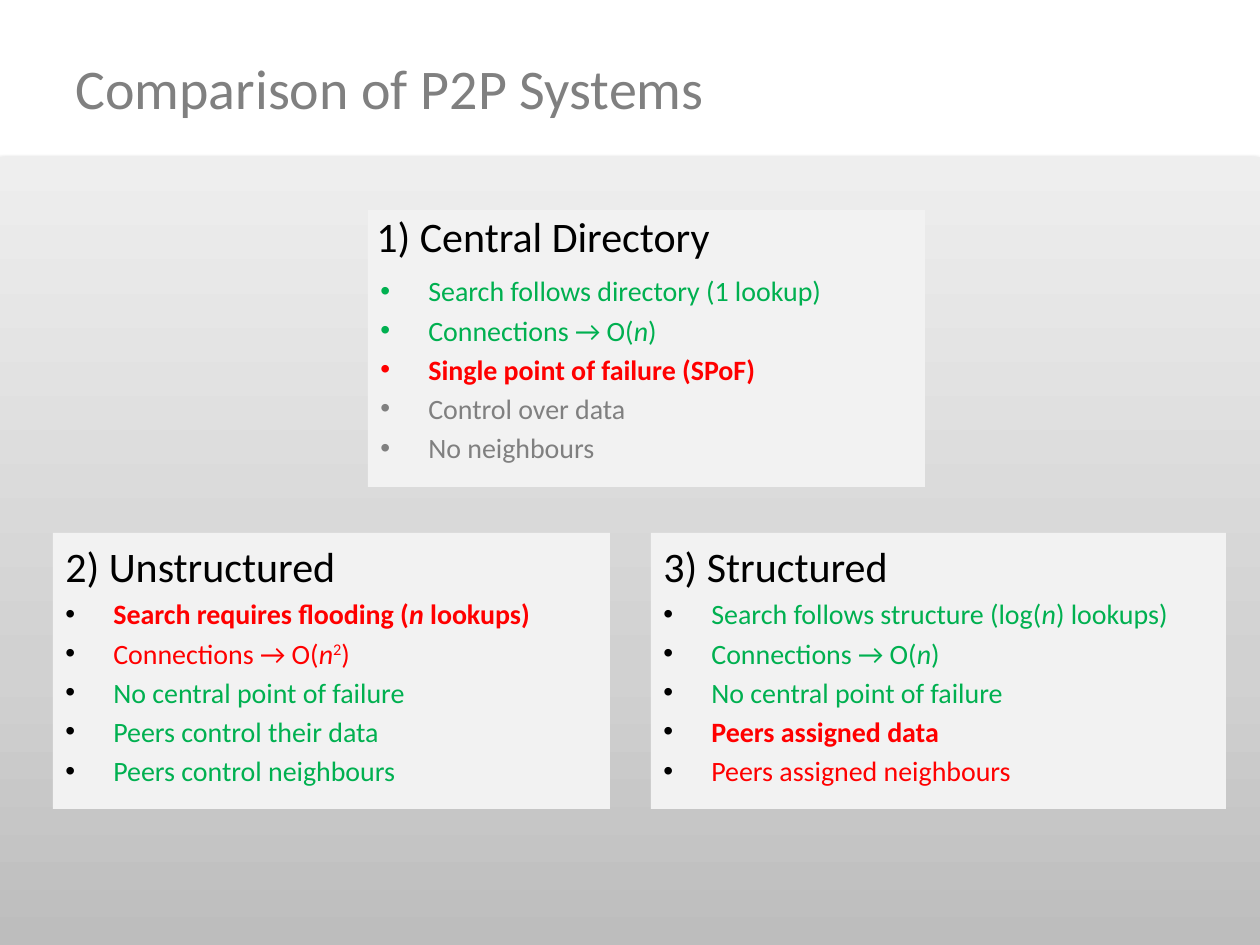
from lxml import etree
from pptx import Presentation, util as u
from pptx.dml.color import RGBColor
from pptx.enum import shapes, text
from pptx.oxml import parse_xml
from pptx.oxml.ns import nsdecls, qn

PX = u.Inches(1) / 126
THEME = {
    "font": "Calibri",
    "title_size": 32,
    "heading_size": 24,
    "bullet_size": 16,
    "black": "000000",
    "grey": "808080",
    "good": "00B050",
    "bad": "FF0000",
    "card": "F2F2F2",
    "gradient": [(0, "BDBDBD"), (35, "D1D1D1"), (100, "EEEEEE")],
}


def px(*lengths):
    return [u.Emu(round(length * PX)) for length in lengths]


def write(paragraph, words, size, color, bold=False, italic=False, raised=False):
    run = paragraph.add_run()
    run.text = words
    run.font.name = THEME["font"]
    run.font.size = u.Pt(size)
    run.font.color.rgb = RGBColor.from_string(THEME[color])
    run.font.bold = bold
    run.font.italic = italic
    if raised:
        run.font._element.set("baseline", "30000")


presentation = Presentation()
presentation.slide_width, presentation.slide_height = px(1260, 945)
slide = presentation.slides.add_slide(presentation.slide_layouts[6])

# Shaded panel below the title
panel = slide.shapes.add_shape(shapes.MSO_SHAPE.RECTANGLE, *px(0, 157, 1260, 788))
panel.line.fill.background()
panel.shadow.inherit = False
properties = panel._element.spPr
stops = "".join(
    f'<a:gs pos="{position * 1000}"><a:srgbClr val="{color}"/></a:gs>'
    for position, color in THEME["gradient"]
)
properties.find(qn("a:prstGeom")).addnext(parse_xml(
    f'<a:gradFill {nsdecls("a")} rotWithShape="1"><a:gsLst>{stops}</a:gsLst>'
    '<a:lin ang="16200000" scaled="0"/></a:gradFill>'
))
properties.find(qn("a:effectLst")).append(parse_xml(
    f'<a:outerShdw {nsdecls("a")} blurRad="40000" dist="20000" dir="5400000" '
    'rotWithShape="0"><a:srgbClr val="000000"><a:alpha val="38000"/></a:srgbClr>'
    '</a:outerShdw>'
))

# Each bullet: colour, bold, pieces of text; "n" is a variable, "2" an exponent
linear = ["Connections → O(", "n", ")"]
cards = [
    {
        "box": (53, 533, 557, 276), "heading": "2) Unstructured",
        "heading_at": (53, 509), "marker": "black",
        "bullets": [
            ("bad", True, ["Search requires flooding (", "n", " lookups)"]),
            ("bad", False, ["Connections → O(", "n", "2", ")"]),
            ("good", False, ["No central point of failure"]),
            ("good", False, ["Peers control their data"]),
            ("good", False, ["Peers control neighbours"]),
        ],
    },
    {
        "box": (651, 533, 575, 276), "heading": "3) Structured",
        "heading_at": (651, 509), "marker": "black",
        "bullets": [
            ("good", False, ["Search follows structure (log(", "n", ") lookups)"]),
            ("good", False, linear),
            ("good", False, ["No central point of failure"]),
            ("bad", True, ["Peers assigned data"]),
            ("bad", False, ["Peers assigned neighbours"]),
        ],
    },
    {
        "box": (368, 210, 557, 277), "heading": "1) Central Directory",
        "heading_at": (364, 179), "marker": None,
        "bullets": [
            ("good", False, ["Search follows directory (1 lookup)"]),
            ("good", False, linear),
            ("bad", True, ["Single point of failure (SPoF)"]),
            ("grey", False, ["Control over data"]),
            ("grey", False, ["No neighbours"]),
        ],
    },
]

for card in cards:
    shape = slide.shapes.add_shape(shapes.MSO_SHAPE.RECTANGLE, *px(*card["box"]))
    shape.shadow.inherit = False
    shape.fill.solid()
    shape.fill.fore_color.rgb = RGBColor.from_string(THEME["card"])
    shape.line.fill.background()
    frame = shape.text_frame
    frame.word_wrap = True
    frame.vertical_anchor = text.MSO_ANCHOR.TOP
    frame.margin_top = px(64)[0]
    for index, (color, bold, pieces) in enumerate(card["bullets"]):
        paragraph = frame.add_paragraph() if index else frame.paragraphs[0]
        paragraph.alignment = text.PP_ALIGN.LEFT
        paragraph.space_after = u.Pt(3.2)
        settings = paragraph._element.get_or_add_pPr()
        indent = px(48)[0]
        settings.set("marL", str(indent))
        settings.set("indent", str(-indent))
        if card["marker"]:
            marker_color = etree.SubElement(settings, qn("a:buClr"))
            etree.SubElement(marker_color, qn("a:srgbClr"), val=THEME[card["marker"]])
        etree.SubElement(settings, qn("a:buFont"), typeface="Arial")
        etree.SubElement(settings, qn("a:buChar"), char="•")
        for piece in pieces:
            write(paragraph, piece, THEME["bullet_size"], color, bold=bold,
                  italic=piece == "n", raised=piece == "2")

# Slide title and card headings
labels = [("Comparison of P2P Systems", (63, 38, 1134, 98), "title_size", "grey",
           text.MSO_ANCHOR.MIDDLE)]
labels += [(card["heading"], (*card["heading_at"], 557, 88), "heading_size", "black",
            text.MSO_ANCHOR.BOTTOM) for card in cards]
for words, box, size, color, anchor in labels:
    frame = slide.shapes.add_textbox(*px(*box)).text_frame
    frame.word_wrap = True
    frame.vertical_anchor = anchor
    write(frame.paragraphs[0], words, THEME[size], color)

presentation.save("out.pptx")
